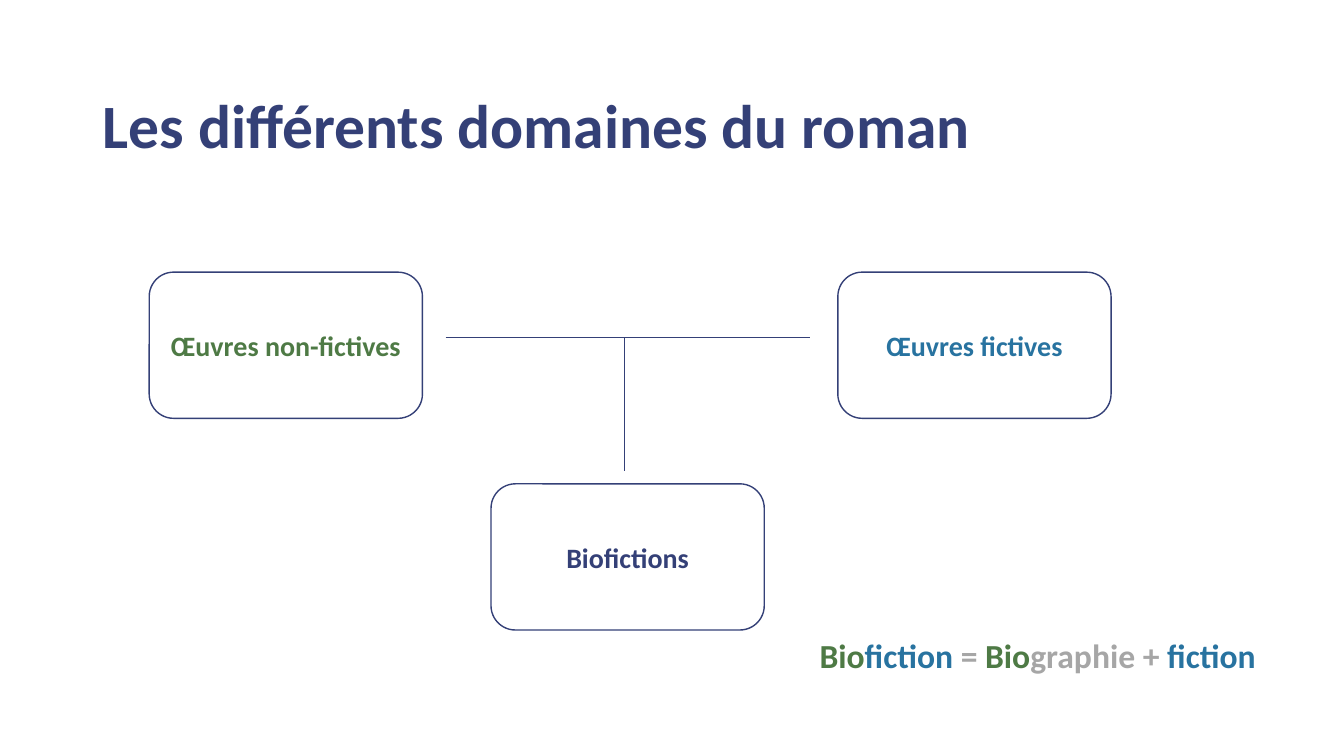
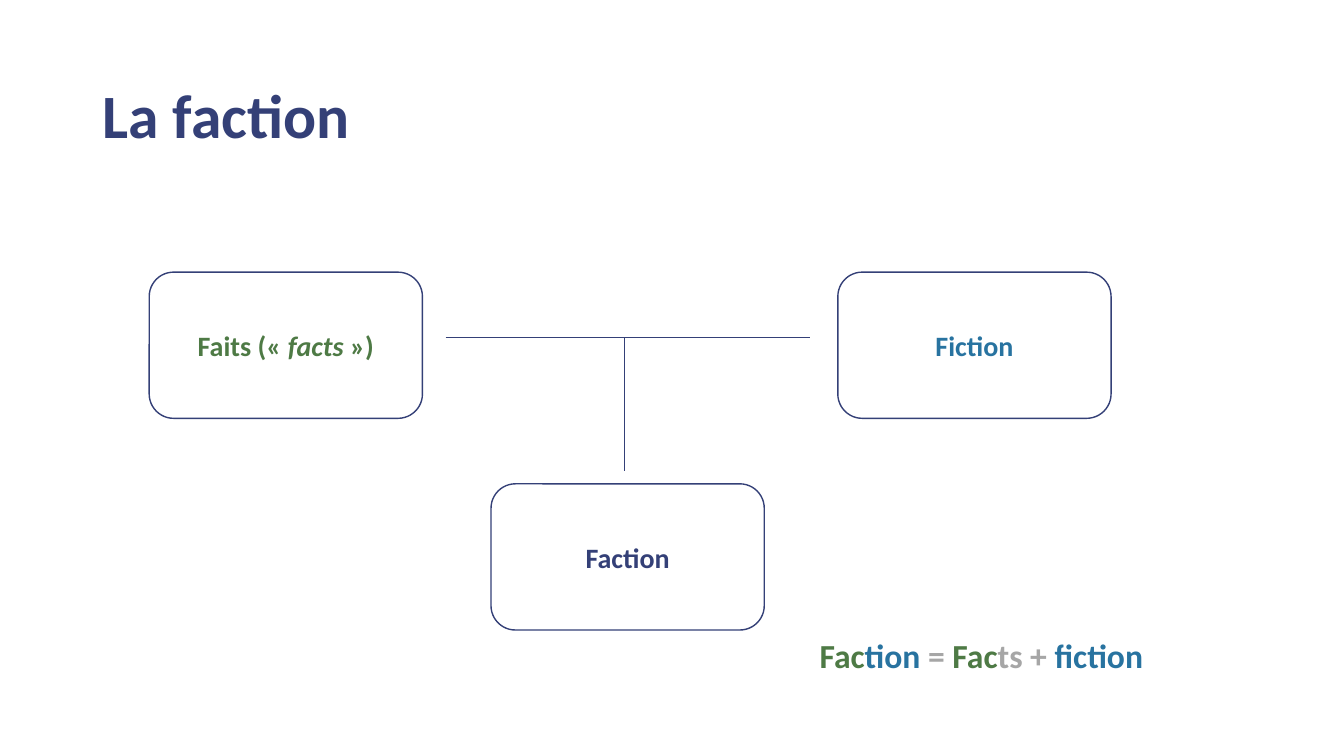
from pptx import Presentation
from pptx import util as u
from pptx.dml.color import RGBColor
from pptx.enum import shapes, text
from pptx.oxml.ns import qn
from lxml import etree

PX = 9144  # EMU per px, 100 px to the inch
FONT = "Calibri"
COLORS = {
    "navy": "344077",
    "green": "4E7A45",
    "blue": "2873A0",
    "grey": "A6A6A6",
    "white": "FFFFFF",
}
TITLE_SIZE, NODE_SIZE, FORMULA_SIZE = 44, 20, 24

# Regions: left, top, width, height
TITLE_LEFT, TITLE_WIDTH, TITLE_HEIGHT = 92, 1150, 145
DIAGRAM = (148, 270, 954, 355)
FORMULA = (803, 625, 475, 50)
NODE_WIDTH, NODE_HEIGHT = 271, 145

# Runs are (text, colour) or (text, colour, italic)
PAGES = [
    {
        "title": "Les différents domaines du roman",
        "title_top": 55,
        "fact": [("Œuvres non-fictives", "green")],
        "fiction": [("Œuvres fictives", "blue")],
        "blend": [("Biofictions", "navy")],
        "formula": [("Bio", "green"), ("fiction ", "blue"), ("= ", "grey"),
                    ("Bio", "green"), ("graphie + ", "grey"), ("fiction", "blue")],
    },
    {
        "title": "La faction",
        "title_top": 45,
        "fact": [("Faits (« ", "green"), ("facts", "green", True), (" »)", "green")],
        "fiction": [("Fiction", "blue")],
        "blend": [("Faction", "navy")],
        "formula": [("Fac", "green"), ("tion ", "blue"), ("= ", "grey"),
                    ("Fac", "green"), ("ts + ", "grey"), ("fiction", "blue")],
    },
]


def px(*lengths):
    return [u.Emu(length * PX) for length in lengths]


def color(name):
    return RGBColor.from_string(COLORS[name])


def write(shape, runs, size, align=text.PP_ALIGN.LEFT, anchor=text.MSO_ANCHOR.MIDDLE):
    frame = shape.text_frame
    frame.word_wrap = True
    frame.vertical_anchor = anchor
    para = frame.paragraphs[0]
    para.alignment = align
    for words, tint, *italic in runs:
        span = para.add_run()
        span.text = words
        font = span.font
        font.name, font.size, font.bold = FONT, u.Pt(size), True
        font.italic = bool(italic)
        font.color.rgb = color(tint)
    return para


def add_title(page, box, title):
    shape = page.shapes.add_textbox(*px(*box))
    write(shape, [(title, "navy")], TITLE_SIZE).line_spacing = 0.9


def add_node(page, left, top, runs):
    node = page.shapes.add_shape(shapes.MSO_SHAPE.ROUNDED_RECTANGLE,
                                 *px(left, top, NODE_WIDTH, NODE_HEIGHT))
    node.shadow.inherit = False
    node.fill.solid()
    node.fill.fore_color.rgb = color("white")
    node.line.color.rgb = color("navy")
    node.line.width = u.Pt(1)
    node.text_frame.margin_left = node.text_frame.margin_right = px(5)[0]
    write(node, runs, NODE_SIZE, text.PP_ALIGN.CENTER)


def add_line(page, *ends):
    line = page.shapes.add_connector(shapes.MSO_CONNECTOR.STRAIGHT, *px(*ends))
    line.line.color.rgb = color("navy")
    line.line.width = u.Pt(0.5)
    etree.SubElement(line._element.spPr, qn("a:effectLst"))


def add_diagram(page, box, content):
    left, top, width, height = box
    # Two sources above, their blend below
    add_node(page, left, top, content["fact"])
    add_node(page, left + width - NODE_WIDTH, top, content["fiction"])
    add_node(page, left + 339, top + height - NODE_HEIGHT, content["blend"])
    # T-shaped link
    bar, stem = top + 65, left + 471
    add_line(page, left + 294, bar, left + 655, bar)
    add_line(page, stem, bar, stem, bar + 132)


def add_formula(page, box, runs):
    shape = page.shapes.add_textbox(*px(*box))
    write(shape, runs, FORMULA_SIZE, anchor=text.MSO_ANCHOR.TOP)


def add_page(deck, content):
    page = deck.slides.add_slide(deck.slide_layouts[6])
    add_title(page, (TITLE_LEFT, content["title_top"], TITLE_WIDTH, TITLE_HEIGHT),
              content["title"])
    add_diagram(page, DIAGRAM, content)
    add_formula(page, FORMULA, content["formula"])


def main():
    deck = Presentation()
    deck.slide_width, deck.slide_height = px(1333, 750)
    for content in PAGES:
        add_page(deck, content)
    deck.save("out.pptx")


if __name__ == "__main__":
    main()
